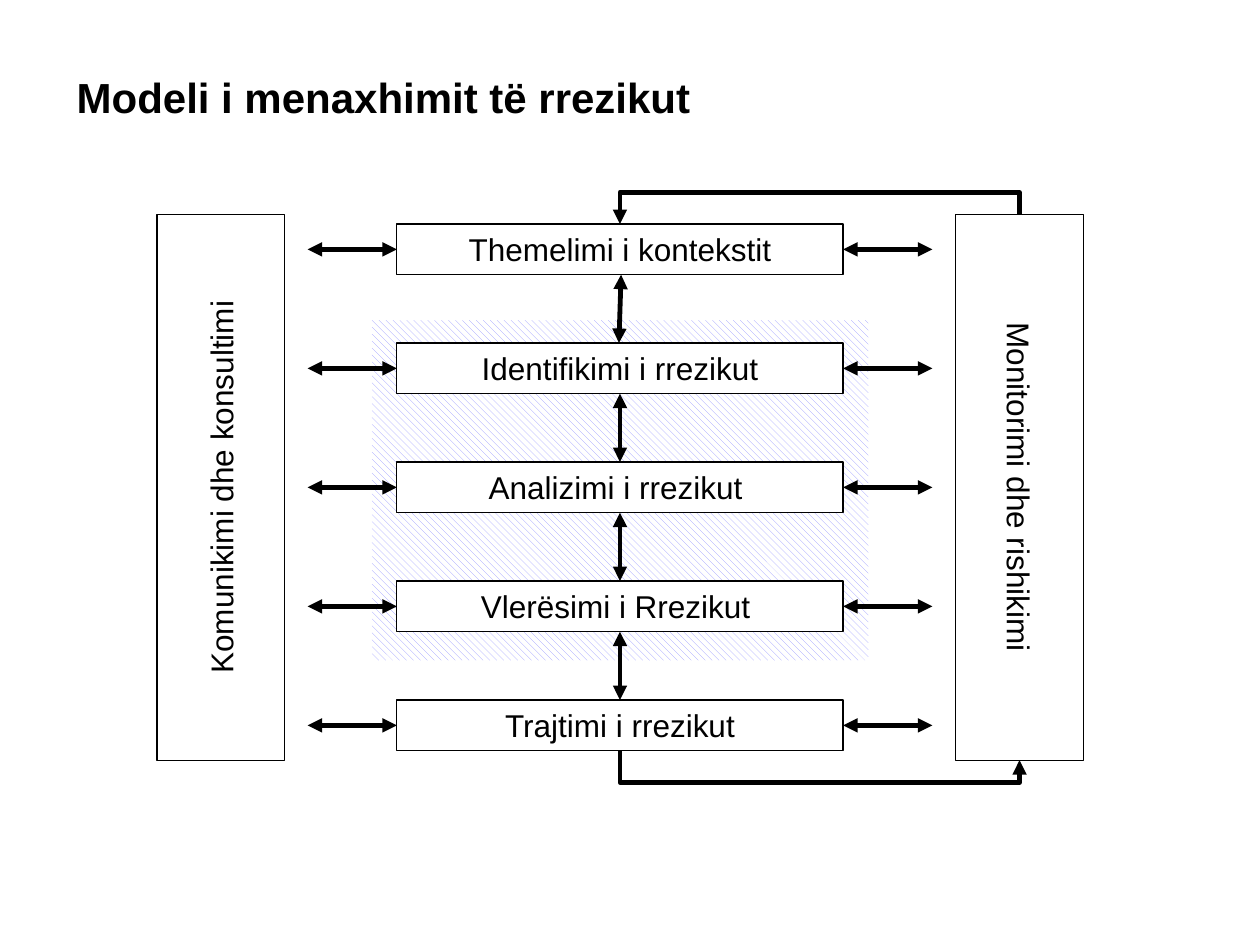
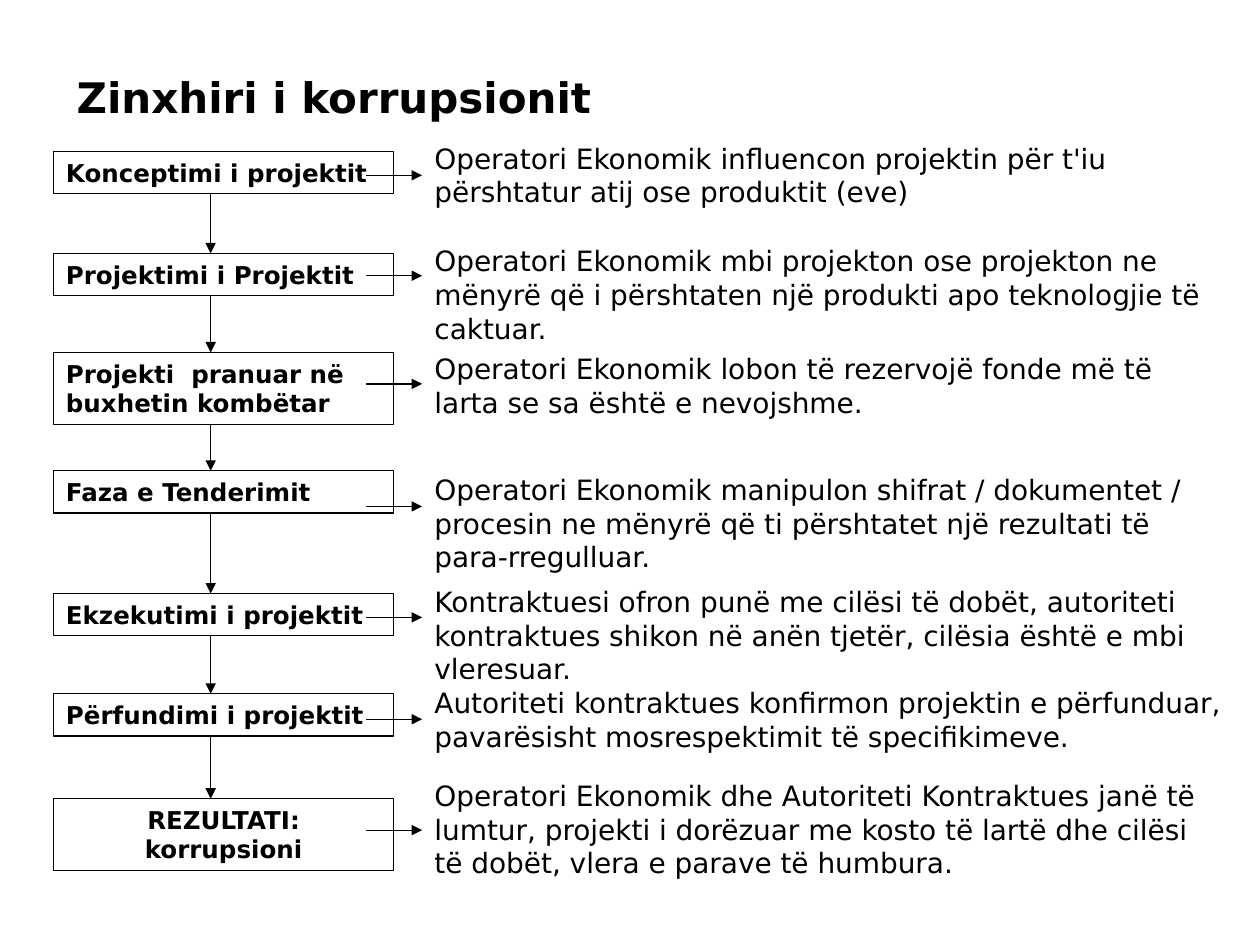
from dataclasses import dataclass

from lxml import etree
from pptx import Presentation
from pptx.dml.color import RGBColor
from pptx.enum.dml import MSO_PATTERN
from pptx.enum.shapes import MSO_CONNECTOR, MSO_SHAPE
from pptx.enum.text import MSO_ANCHOR, PP_ALIGN
from pptx.oxml.ns import qn
from pptx.util import Pt

BLACK = RGBColor(0, 0, 0)
WHITE = RGBColor(255, 255, 255)
LAVENDER = RGBColor(0x99, 0x99, 0xFF)

RECTANGLE = MSO_SHAPE.RECTANGLE
STRAIGHT, ELBOW = MSO_CONNECTOR.STRAIGHT, MSO_CONNECTOR.ELBOW
DIAGONAL = MSO_PATTERN.WIDE_DOWNWARD_DIAGONAL
TOP, MIDDLE = MSO_ANCHOR.TOP, MSO_ANCHOR.MIDDLE
LEFT, CENTER = PP_ALIGN.LEFT, PP_ALIGN.CENTER

ARIAL, DEJAVU = "Arial", "DejaVu Sans"
THIN, THICK = 0.75, 2.75

STEPS = [
    "Themelimi i kontekstit",
    "Identifikimi i rrezikut",
    "Analizimi i rrezikut ",
    "Vlerësimi i Rrezikut ",
    "Trajtimi i rrezikut",
]
STEP_LEFT, STEP_TOP, STEP_WIDTH, STEP_HEIGHT = 226.8, 128, 255, 29
STEP_PITCH = 68
STEP_RIGHT = STEP_LEFT + STEP_WIDTH
STEP_CENTER = STEP_LEFT + STEP_WIDTH / 2
SIDE_ARROW = 51

PANEL_TOP, PANEL_LENGTH, PANEL_DEPTH = 122.4, 312, 73
PANEL_BOTTOM = PANEL_TOP + PANEL_LENGTH
LEFT_PANEL_CENTER, RIGHT_PANEL_CENTER = 126.2, 582.6
LOOP_CLEARANCE = 18

STAGE_LEFT, STAGE_WIDTH = 30.6, 194.4
STAGE_ARROW_X = 120.4
NOTE_ARROW_START, NOTE_LEFT = 209.2, 241.2


@dataclass(frozen=True)
class Box:
    """A rectangle measured in points."""

    left: float
    top: float
    width: float
    height: float


@dataclass(frozen=True)
class TextStyle:
    """The look of a block of text."""

    font: str
    size: float
    bold: bool = False
    align: PP_ALIGN = LEFT
    anchor: MSO_ANCHOR = TOP


@dataclass(frozen=True)
class Stage:
    """A link of the corruption chain and the note beside it."""

    label: str
    top: float
    height: float
    arrow_y: float
    note: str
    note_top: float
    note_height: float
    note_width: float = 453.6
    align: PP_ALIGN = LEFT


STEP_STYLE = TextStyle(ARIAL, 18, align=CENTER)
PANEL_STYLE = TextStyle(ARIAL, 18, align=CENTER, anchor=MIDDLE)
NOTE_STYLE = TextStyle(DEJAVU, 16)

STAGES = [
    Stage("Konceptimi i projektit", 86.6, 24.2, 100.2,
          "Operatori Ekonomik influencon projektin për t'iu përshtatur atij "
          "ose produktit (eve)", 77.2, 46),
    Stage("Projektimi i Projektit", 144.8, 24.2, 157.6,
          "Operatori Ekonomik mbi projekton ose projekton ne mënyrë që i "
          "përshtaten një produkti apo teknologjie të caktuar.", 135.8, 65.4),
    Stage("Projekti  pranuar në buxhetin kombëtar", 201.4, 41.2, 219.4,
          "Operatori Ekonomik lobon të rezervojë fonde më të larta se sa "
          "është e nevojshme.", 197.3, 46),
    Stage("Faza e Tenderimit", 269, 24.2, 289.4,
          "Operatori Ekonomik manipulon shifrat / dokumentet / procesin ne "
          "mënyrë që ti përshtatet një rezultati të para-rregulluar.",
          266.6, 65.4),
    Stage("Ekzekutimi i projektit", 339.2, 24.2, 352.8,
          "Kontraktuesi ofron punë me cilësi të dobët, autoriteti kontraktues "
          "shikon në anën tjetër, cilësia është e mbi vleresuar.",
          330.6, 65.4),
    Stage("Përfundimi i projektit", 396.4, 24.2, 411,
          "Autoriteti kontraktues konfirmon projektin e përfunduar, "
          "pavarësisht mosrespektimit të specifikimeve.", 388.2, 46, 471),
    Stage("REZULTATI:\nkorrupsioni", 456.4, 41.2, 474.4,
          "Operatori Ekonomik dhe Autoriteti Kontraktues janë të lumtur, "
          "projekti i dorëzuar me kosto të lartë dhe cilësi të dobët, vlera e "
          "parave të humbura.", 441.4, 65.4, align=CENTER),
]


def points(box: Box) -> tuple:
    """Return the sides of a box as lengths."""
    return Pt(box.left), Pt(box.top), Pt(box.width), Pt(box.height)


def write_text(shape, text: str, style: TextStyle) -> None:
    """Fill a shape with styled text."""
    frame = shape.text_frame
    frame.word_wrap = True
    frame.vertical_anchor = style.anchor
    frame.text = text
    font_values = {"name": style.font, "size": Pt(style.size), "bold": style.bold}
    for paragraph in frame.paragraphs:
        paragraph.alignment = style.align
        for run in paragraph.runs:
            for name, value in font_values.items():
                setattr(run.font, name, value)
            run.font.color.rgb = BLACK


def add_title(slide, text: str, font: str) -> None:
    """Add the slide title."""
    title = slide.shapes.add_textbox(*points(Box(36.7, 37.4, 675.4, 36)))
    write_text(title, text, TextStyle(font, 24, bold=True))


def add_box(slide, box: Box, text: str, style: TextStyle,
            filled: bool = True, outlined: bool = True):
    """Add a rectangle that holds text."""
    shape = slide.shapes.add_shape(RECTANGLE, *points(box))
    shape.shadow.inherit = False
    if filled:
        shape.fill.solid()
        shape.fill.fore_color.rgb = WHITE
    else:
        shape.fill.background()
    if outlined:
        shape.line.color.rgb = BLACK
        shape.line.width = Pt(THIN)
    else:
        shape.line.fill.background()
    write_text(shape, text, style)
    return shape


def add_arrow(slide, start: tuple, end: tuple, width: float,
              double: bool = False, kind: MSO_CONNECTOR = STRAIGHT):
    """Add an arrow between two points."""
    connector = slide.shapes.add_connector(
        kind, *(Pt(value) for value in (*start, *end)))
    connector.line.color.rgb = BLACK
    connector.line.width = Pt(width)
    line = connector.line._get_or_add_ln()
    for tag in ("a:headEnd", "a:tailEnd") if double else ("a:tailEnd",):
        etree.SubElement(line, qn(tag), type="triangle")
    etree.SubElement(connector._element.spPr, qn("a:effectLst"))
    return connector


def add_loop(slide, start: tuple, end: tuple, bend_y: float) -> None:
    """Add an elbow arrow that leaves vertically and turns at bend_y."""
    span, rise = abs(end[0] - start[0]), end[1] - start[1]
    center_x, center_y = (start[0] + end[0]) / 2, (start[1] + end[1]) / 2
    connector = add_arrow(
        slide, (center_x - rise / 2, center_y - span / 2),
        (center_x + rise / 2, center_y + span / 2), THICK, kind=ELBOW)
    properties = connector._element.spPr
    frame = properties.find(qn("a:xfrm"))
    frame.set("rot", str(270 * 60000))
    frame.set("flipH", "1")
    if end[0] < start[0]:
        frame.set("flipV", "1")
    adjustment = round((bend_y - start[1]) / rise * 100000)
    guides = properties.find(qn("a:prstGeom")).find(qn("a:avLst"))
    etree.SubElement(guides, qn("a:gd"), name="adj1", fmla=f"val {adjustment}")


def add_panel(slide, center_x: float, text: str, rotation: float) -> None:
    """Add a tall side panel with turned text."""
    middle = PANEL_TOP + PANEL_LENGTH / 2
    box = Box(center_x - PANEL_LENGTH / 2, middle - PANEL_DEPTH / 2,
              PANEL_LENGTH, PANEL_DEPTH)
    add_box(slide, box, text, PANEL_STYLE, filled=False).rotation = rotation


def build_model_slide(slide) -> None:
    """Build the risk management model."""
    add_title(slide, "Modeli i menaxhimit të rrezikut", ARIAL)
    add_panel(slide, LEFT_PANEL_CENTER, "Komunikimi dhe konsultimi", 270)
    add_panel(slide, RIGHT_PANEL_CENTER, "Monitorimi dhe rishikimi", 90)

    area = slide.shapes.add_shape(RECTANGLE, *points(Box(212.6, 183, 283.6, 194.4)))
    area.shadow.inherit = False
    area.fill.patterned()
    area.fill.pattern = DIAGONAL
    area.fill.fore_color.rgb = LAVENDER
    area.fill.back_color.rgb = WHITE
    area.line.fill.background()

    tops = [STEP_TOP + index * STEP_PITCH for index in range(len(STEPS))]
    for top, label in zip(tops, STEPS):
        add_box(slide, Box(STEP_LEFT, top, STEP_WIDTH, STEP_HEIGHT), label, STEP_STYLE)
        middle = top + STEP_HEIGHT / 2
        for inner, outer in ((STEP_LEFT, STEP_LEFT - SIDE_ARROW),
                             (STEP_RIGHT, STEP_RIGHT + SIDE_ARROW)):
            add_arrow(slide, (inner, middle), (outer, middle), THICK, double=True)
    for top, next_top in zip(tops, tops[1:]):
        slant = 0.6 if top == STEP_TOP else 0
        add_arrow(slide, (STEP_CENTER + slant, top + STEP_HEIGHT),
                  (STEP_CENTER - slant, next_top), THICK, double=True)

    last_bottom = tops[-1] + STEP_HEIGHT
    add_loop(slide, (STEP_CENTER, last_bottom), (RIGHT_PANEL_CENTER, PANEL_BOTTOM),
             last_bottom + LOOP_CLEARANCE)
    add_loop(slide, (RIGHT_PANEL_CENTER, PANEL_TOP), (STEP_CENTER, STEP_TOP),
             STEP_TOP - LOOP_CLEARANCE)


def build_chain_slide(slide) -> None:
    """Build the corruption chain."""
    for stage in STAGES:
        add_box(slide, Box(STAGE_LEFT, stage.top, STAGE_WIDTH, stage.height),
                stage.label, TextStyle(DEJAVU, 14, bold=True, align=stage.align))
        add_arrow(slide, (NOTE_ARROW_START, stage.arrow_y),
                  (NOTE_LEFT, stage.arrow_y), THIN)
    for stage, following in zip(STAGES, STAGES[1:]):
        add_arrow(slide, (STAGE_ARROW_X, stage.top + stage.height),
                  (STAGE_ARROW_X, following.top), THIN)
    for stage in STAGES:
        box = Box(NOTE_LEFT, stage.note_top, stage.note_width, stage.note_height)
        add_box(slide, box, stage.note, NOTE_STYLE, outlined=False)
    add_title(slide, "Zinxhiri i korrupsionit", DEJAVU)


def main() -> None:
    """Build and save the presentation."""
    presentation = Presentation()
    presentation.slide_width, presentation.slide_height = Pt(720), Pt(540)
    blank = presentation.slide_layouts[6]
    for build in (build_model_slide, build_chain_slide):
        build(presentation.slides.add_slide(blank))
    presentation.save("out.pptx")


if __name__ == "__main__":
    main()
